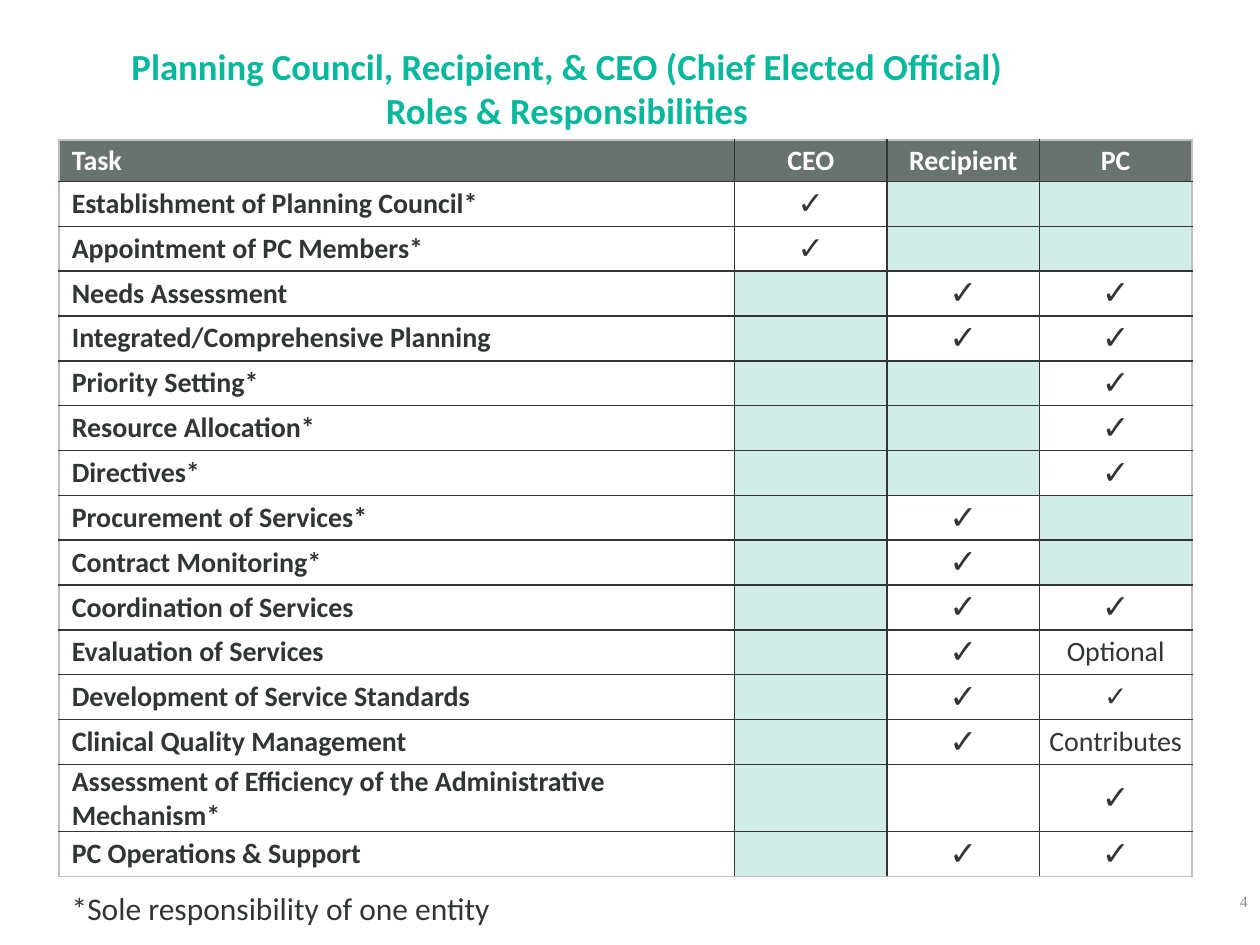
import pptx
import pptx.util
import pptx.dml.color
import pptx.enum.text
import pptx.oxml
import lxml.etree
from pptx.oxml.ns import qn

Inches = pptx.util.Inches
Pt = pptx.util.Pt
RGBColor = pptx.dml.color.RGBColor
ALIGN = pptx.enum.text.PP_ALIGN
ANCHOR = pptx.enum.text.MSO_ANCHOR

TEAL = RGBColor(0x08, 0xB8, 0x9C)
MINT = RGBColor(0xA6, 0xDB, 0xD2)
SLATE = RGBColor(0x69, 0x72, 0x6F)
INK = RGBColor(0x31, 0x35, 0x34)
EDGE = RGBColor(0xBF, 0xBF, 0xBF)
GRAY = RGBColor(0x90, 0x90, 0x90)
WHITE = RGBColor(0xFF, 0xFF, 0xFF)

TITLE = "Planning Council, Recipient, & CEO (Chief Elected Official)\vRoles & Responsibilities"
FOOTNOTE = "*Sole responsibility of one entity\t"
PAGE_NUMBER = "4"
CHECK = "✓"
SHADED = None
HEADER = ("Task", "CEO", "Recipient", "PC")
TASKS = [
    ("Establishment of Planning Council*", CHECK, SHADED, SHADED),
    ("Appointment of PC Members*", CHECK, SHADED, SHADED),
    ("Needs Assessment", SHADED, CHECK, CHECK),
    ("Integrated/Comprehensive Planning", SHADED, CHECK, CHECK),
    ("Priority Setting*", SHADED, SHADED, CHECK),
    ("Resource Allocation*", SHADED, SHADED, CHECK),
    ("Directives*", SHADED, SHADED, CHECK),
    ("Procurement of Services*", SHADED, CHECK, SHADED),
    ("Contract Monitoring*", SHADED, CHECK, SHADED),
    ("Coordination of Services", SHADED, CHECK, CHECK),
    ("Evaluation of Services", SHADED, CHECK, "Optional"),
    ("Development of Service Standards", SHADED, CHECK, CHECK),
    ("Clinical Quality Management", SHADED, CHECK, "Contributes"),
    ("Assessment of Efficiency of the Administrative Mechanism*", SHADED, "", CHECK),
    ("PC Operations & Support", SHADED, CHECK, CHECK),
]
SMALL_CHECK = ("Development of Service Standards", 3)

COLUMN_WIDTHS = (5.36, 1.21, 1.21, 1.21)
HEADER_HEIGHT = 0.33
BODY_HEIGHT = 5.34


def style(paragraph, size, color, bold=False, align=ALIGN.LEFT, font="Calibri"):
    paragraph.alignment = align
    for span in paragraph.runs:
        span.font.size = Pt(size)
        span.font.name = font
        span.font.bold = bold
        span.font.color.rgb = color


def add_text(page, text, place, size, color, anchor=ANCHOR.TOP, **look):
    box = page.shapes.add_textbox(*map(Inches, place))
    frame = box.text_frame
    frame.word_wrap = True
    frame.vertical_anchor = anchor
    paragraph = frame.paragraphs[0]
    paragraph.text = text
    style(paragraph, size, color, **look)
    return paragraph


def set_borders(cell, colors):
    properties = cell._tc.get_or_add_tcPr()
    for index, (side, color) in enumerate(colors.items()):
        line = pptx.oxml.parse_xml(
            f'<a:{side} xmlns:a="http://schemas.openxmlformats.org/drawingml/2006/main" w="12700">'
            f'<a:solidFill><a:srgbClr val="{color}"/></a:solidFill></a:{side}>')
        properties.insert(index, line)


def set_fill(cell, color, alpha=None):
    cell.fill.solid()
    cell.fill.fore_color.rgb = color
    if alpha:
        value = cell._tc.tcPr.find(".//" + qn("a:srgbClr"))
        lxml.etree.SubElement(value, qn("a:alpha")).set("val", str(alpha * 1000))


def cell_look(row, column, text):
    if row == 0 or column == 0:
        return 16, True
    if text != CHECK:
        return 16, False
    if column == 1:
        return 18, False
    return (16 if (TASKS[row - 1][0], column) == SMALL_CHECK else 19), True


def fill_cell(cell, row, column, text):
    cell.margin_left = Inches(0.1 if column == 0 else 0)
    cell.margin_right = cell.margin_top = cell.margin_bottom = 0
    cell.vertical_anchor = ANCHOR.MIDDLE
    if text is SHADED:
        set_fill(cell, MINT, 50)
    else:
        set_fill(cell, SLATE if row == 0 else WHITE)
    if text:
        cell.text_frame.text = text
        size, bold = cell_look(row, column, text)
        style(cell.text_frame.paragraphs[0], size, WHITE if row == 0 else INK, bold,
              ALIGN.LEFT if column == 0 else ALIGN.CENTER)
    set_borders(cell, {
        "lnL": EDGE if column == 0 else INK,
        "lnR": EDGE if column == len(HEADER) - 1 else INK,
        "lnT": EDGE if row == 0 else INK,
        "lnB": EDGE if row == len(TASKS) else INK,
    })


def add_task_table(page):
    rows = [HEADER, *TASKS]
    table = page.shapes.add_table(
        len(rows), len(HEADER), Inches(0.47), Inches(1.11),
        Inches(sum(COLUMN_WIDTHS)), Inches(HEADER_HEIGHT + BODY_HEIGHT)).table
    table.horz_banding = False
    for column, width in zip(table.columns, COLUMN_WIDTHS):
        column.width = Inches(width)
    for row, texts in enumerate(rows):
        table.rows[row].height = Inches(BODY_HEIGHT / len(TASKS) if row else HEADER_HEIGHT)
        for column, text in enumerate(texts):
            fill_cell(table.cell(row, column), row, column, text)


def main():
    deck = pptx.Presentation()
    deck.slide_width, deck.slide_height = Inches(10), Inches(7.5)
    page = deck.slides.add_slide(deck.slide_layouts[6])
    add_text(page, TITLE, (0, 0.3, 9, 1.25), 21, TEAL, bold=True, align=ALIGN.CENTER)
    add_task_table(page)
    add_text(page, FOOTNOTE, (0.47, 7.01, 9, 0.4), 18, INK)
    add_text(page, PAGE_NUMBER, (7.75, 6.95, 2.25, 0.4), 9, GRAY, ANCHOR.MIDDLE,
             align=ALIGN.RIGHT, font="Times New Roman")
    deck.save("out.pptx")


if __name__ == "__main__":
    main()
